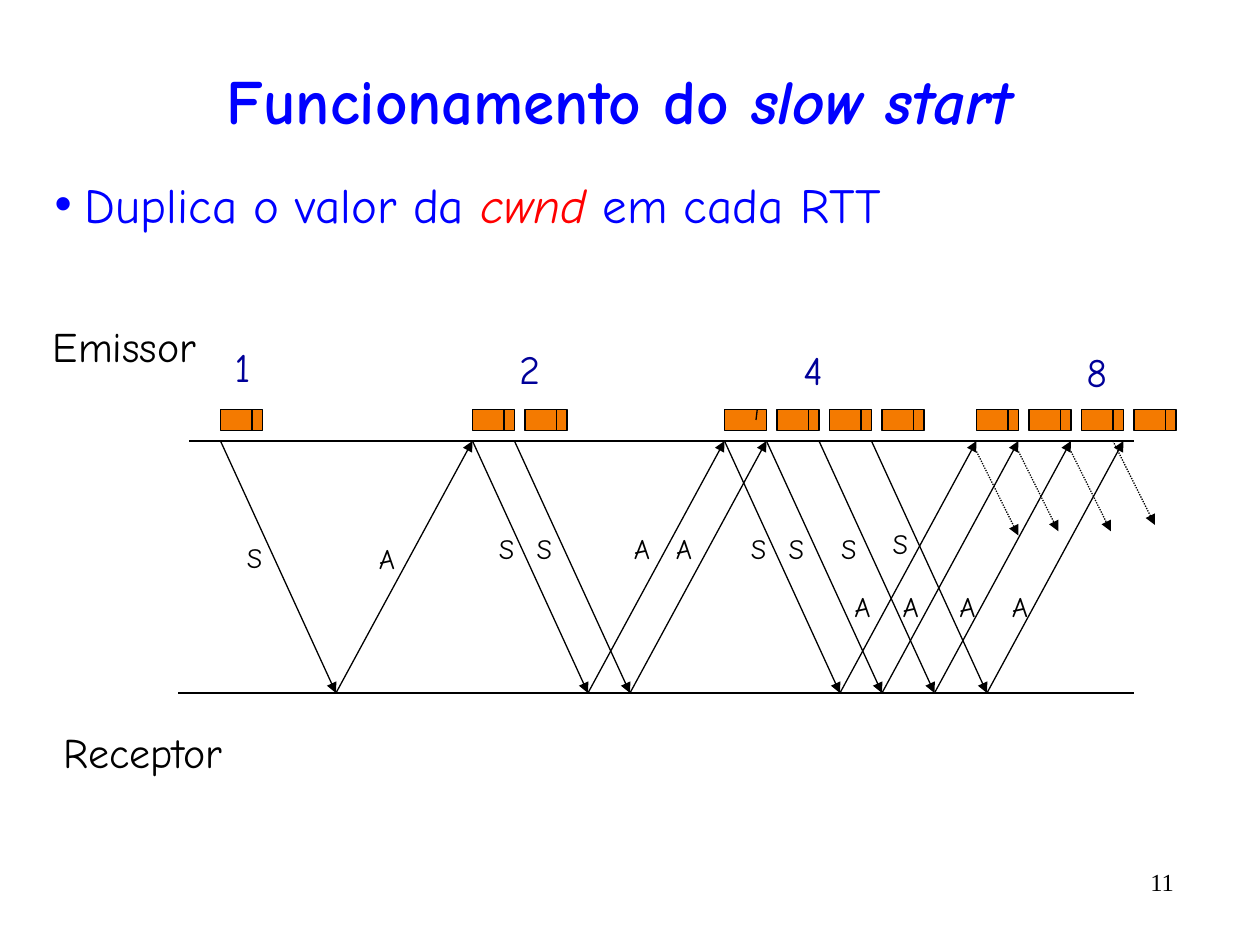
from dataclasses import dataclass
from lxml.etree import SubElement
from pptx import Presentation
from pptx.dml.color import RGBColor
from pptx.enum.dml import MSO_LINE_DASH_STYLE as Dash
from pptx.enum.shapes import MSO_CONNECTOR, MSO_SHAPE
from pptx.enum.text import MSO_ANCHOR as Anchor, MSO_AUTO_SIZE as AutoSize, PP_ALIGN as Align
from pptx.oxml.ns import qn
from pptx.util import Emu, Inches, Pt


@dataclass(frozen=True)
class Theme:
    font: str = "Comic Neue"
    number_font: str = "Times New Roman"
    blue: str = "0000FF"
    navy: str = "000099"
    red: str = "FF0000"
    black: str = "000000"
    orange: str = "F47A00"
    title: int = 36
    body: int = 28
    host: int = 24
    window: int = 23
    label: int = 16
    page: int = 14
    stroke: float = 0.75


T = Theme()

TITLE = [("Funcionamento do ", {}), ("slow start", {"italic": True})]
BODY = [("Duplica o valor da ", {}), ("cwnd", {"italic": True, "color": T.red}), (" em cada RTT", {})]
HOSTS = [("Emissor", 3.2, 29.9, 17.3), ("Receptor", 3.8, 68.6, 19.6)]
WINDOWS = [("1", 32, 4.2), ("2", 32.2, 4.9), ("4", 32.3, 4.9), ("8", 32.5, 4.9)]
PACKETS = [1, 2, 4, 4]
LABELS = [
    ("S", 50.9, [22.1]),
    ("A", 51, [34.7]),
    ("S", 50, [46.1, 49.7, 70.1, 73.7, 78.7]),
    ("A", 50, [59, 63]),
    ("S", 49.6, [83.6]),
    ("A", 55.6, [80, 84.6, 90, 95]),
]
PENDING = [(93, 43, 97, 51), (97, 43, 100.8, 50.6), (102, 43, 105.8, 50.6), (106, 42, 110, 50)]

UNIT = Inches(1) / 12
SENDER, RECEIVER, LINE_END = 42, 66, 108
START, ROUND, WINDOW_STEP = 21, 24, 27
SEND_OFFSETS, DOWN, UP = [0, 4, 9, 14], 11, 13
PACKET_TOP, PACKET_W, PACKET_H, PACKET_STEP, HEADER = 39, 4, 2, 5, 3


def units(*values):
    return [Emu(round(value * UNIT)) for value in values]


def write(frame, runs, *, size, color=T.black, font=T.font, bold=False,
          align=Align.CENTER, anchor=Anchor.TOP, wrap=False):
    frame.word_wrap = wrap
    frame.auto_size = AutoSize.NONE
    frame.vertical_anchor = anchor
    paragraph = frame.paragraphs[0]
    paragraph.alignment = align
    paragraph.space_before = Pt(0)
    for words, style in [(runs, {})] if isinstance(runs, str) else runs:
        run = paragraph.add_run()
        run.text = words
        run.font.name = font
        run.font.size = Pt(size)
        run.font.bold = bold
        run.font.italic = style.get("italic", False)
        run.font.color.rgb = RGBColor.from_string(style.get("color", color))
    return paragraph


def place(holder, *box):
    holder.left, holder.top, holder.width, holder.height = units(*box)
    return holder.text_frame


def textbox(slide, words, *box, **style):
    write(slide.shapes.add_textbox(*units(*box)).text_frame, words, **style)


def connect(slide, *ends, arrow=False, dash=None):
    line = slide.shapes.add_connector(MSO_CONNECTOR.STRAIGHT, *units(*ends))
    line.line.color.rgb = RGBColor.from_string(T.black)
    line.line.width = Pt(T.stroke)
    if dash:
        line.line.dash_style = dash
    if arrow:
        SubElement(line.line._get_or_add_ln(), qn("a:tailEnd"), type="triangle")
    SubElement(line._element.spPr, qn("a:effectLst"))


def draw_packet(slide, left, slanted):
    packet = slide.shapes.add_shape(MSO_SHAPE.RECTANGLE, *units(left, PACKET_TOP, PACKET_W, PACKET_H))
    packet.shadow.inherit = False
    packet.fill.solid()
    packet.fill.fore_color.rgb = RGBColor.from_string(T.orange)
    packet.line.color.rgb = RGBColor.from_string(T.black)
    packet.line.width = Pt(T.stroke)
    header = left + HEADER
    if slanted:
        connect(slide, header + 0.12, PACKET_TOP, header, PACKET_TOP + PACKET_H / 2)
    else:
        connect(slide, header, PACKET_TOP, header, PACKET_TOP + PACKET_H)


def draw_round(slide, index, count):
    left = START + ROUND * index
    if index < len(PACKETS) - 1:
        for offset in SEND_OFFSETS[:count]:
            sent = left + offset
            arrived = sent + DOWN
            connect(slide, sent, SENDER, arrived, RECEIVER, arrow=True)
            connect(slide, arrived, RECEIVER, arrived + UP, SENDER, arrow=True)
    for place_in_round in range(count):
        draw_packet(slide, left + PACKET_STEP * place_in_round, (index, place_in_round) == (2, 0))


def main():
    deck = Presentation()
    deck.slide_width, deck.slide_height = Inches(10), Inches(7.5)
    slide = deck.slides.add_slide(deck.slide_layouts[1])
    title, body = slide.placeholders

    write(place(title, 4, 5, 110, 9), TITLE, size=T.title, color=T.blue, bold=True,
          anchor=Anchor.MIDDLE, wrap=True)
    bullet = write(place(body, 4, 16, 113, 72), BODY, size=T.body, color=T.blue,
                   align=Align.LEFT, wrap=True)
    indent = Inches(0.24)
    properties = bullet._p.get_or_add_pPr()
    properties.set("marL", str(indent))
    properties.set("indent", str(-indent))
    SubElement(properties, qn("a:buChar"), char="•")
    textbox(slide, "11", 101, 82, 12, 5, size=T.page, font=T.number_font, align=Align.RIGHT, wrap=True)

    connect(slide, 18, SENDER, LINE_END, SENDER)
    connect(slide, 17, RECEIVER, LINE_END, RECEIVER)
    for index, count in enumerate(PACKETS):
        draw_round(slide, index, count)
    for ends in PENDING:
        connect(slide, *ends, arrow=True, dash=Dash.ROUND_DOT)

    for letter, top, columns in LABELS:
        for left in columns:
            textbox(slide, letter, left, top, 4.3, 4.4, size=T.label)
    for host, left, top, width in HOSTS:
        textbox(slide, host, left, top, width, 6.1, size=T.host)
    for index, (window, top, width) in enumerate(WINDOWS):
        textbox(slide, window, START + WINDOW_STEP * index, top, width, 6.1, size=T.window, color=T.navy)

    deck.save("out.pptx")


if __name__ == "__main__":
    main()
